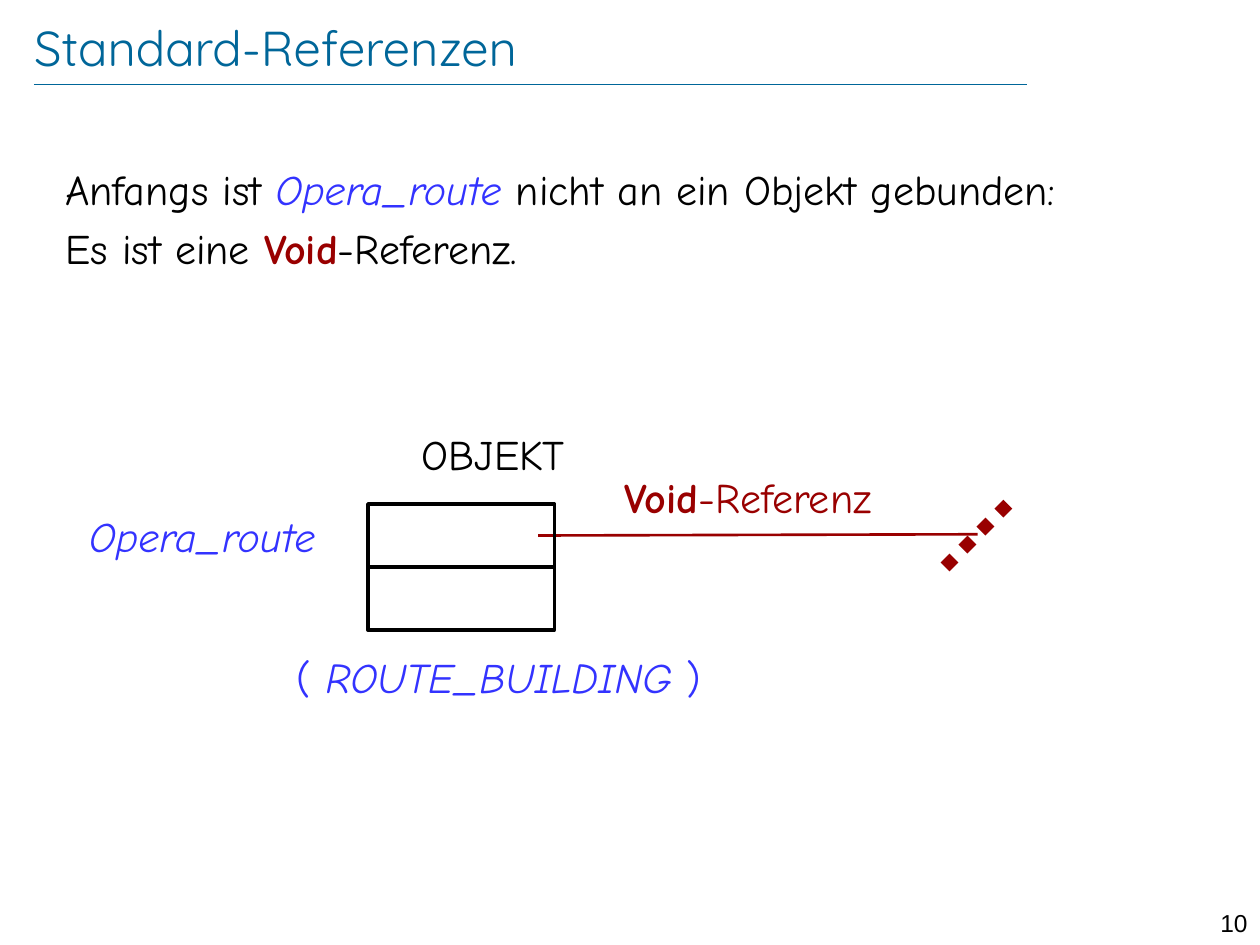
from dataclasses import dataclass

import pptx
import pptx.dml.color
import pptx.enum.dml
import pptx.enum.shapes
import pptx.enum.text
import pptx.oxml.ns
import pptx.util
from lxml import etree

Pt = pptx.util.Pt
RGBColor = pptx.dml.color.RGBColor
ALIGN = pptx.enum.text.PP_ALIGN
ANCHOR = pptx.enum.text.MSO_ANCHOR
DASH = pptx.enum.dml.MSO_LINE

BLACK = RGBColor(0x00, 0x00, 0x00)
TEAL = RGBColor(0x00, 0x66, 0x99)
BLUE = RGBColor(0x33, 0x33, 0xFF)
RED = RGBColor(0x99, 0x00, 0x00)
TEXT_FONT = "Comic Neue"


@dataclass
class Run:
    text: str
    color: RGBColor = BLACK
    bold: bool = False
    italic: bool = False


@dataclass
class Label:
    box: tuple[float, float, float, float]
    paragraphs: list[list[Run]]
    align: ALIGN = ALIGN.LEFT
    font: str = TEXT_FONT
    size: float = 24


@dataclass
class Line:
    start: tuple[float, float]
    end: tuple[float, float]
    color: RGBColor
    width: float
    dash: DASH | None = None


RULE = Line((19.44, 48.24), (586.8, 48.24), TEAL, 0.25)
REFERENCE = Line((307.5, 306), (558.7, 305.3), RED, 1.5)
VOID_MARK = Line((540, 324), (576, 288), RED, 7.25, DASH.ROUND_DOT)

LABELS = [
    Label((680.4, 515.5, 39.6, 17.3), [[Run("10")]], ALIGN.RIGHT, "Arial", 14),
    Label((30.24, 90, 671, 402.5), [
        [Run("Anfangs ist "), Run("Opera_route ", BLUE, italic=True),
         Run("nicht an ein Objekt gebunden:")],
        [Run("Es ist eine "), Run("Void", RED, bold=True), Run("-Referenz.")],
    ]),
    Label((234, 241.2, 383.8, 36), [[Run("OBJEKT")]]),
    Label((43.9, 288, 166.3, 36), [[Run("Opera_route", BLUE, italic=True)]]),
    Label((349.9, 265.7, 188.6, 36),
          [[Run("Void", RED, bold=True), Run("-Referenz", RED)]]),
    Label((108.7, 368.6, 352.8, 36),
          [[Run("( ", BLUE), Run("ROUTE_BUILDING ", BLUE, italic=True),
            Run(")", BLUE)]], ALIGN.CENTER),
]

FIELD_LEFT, FIELD_TOP, FIELD_WIDTH, FIELD_HEIGHT = 210.24, 288, 106.56, 36
FIELD_COUNT = 2


def add_title(slide, text: str) -> None:
    sp = slide.shapes.title
    sp.left, sp.top, sp.width, sp.height = Pt(19.44), Pt(9.4), Pt(625.7), Pt(34.6)
    tf = sp.text_frame
    tf.text = text
    tf.vertical_anchor = ANCHOR.MIDDLE
    tf.margin_left = tf.margin_top = tf.margin_right = tf.margin_bottom = 0
    p = tf.paragraphs[0]
    p.alignment = ALIGN.LEFT
    font = p.runs[0].font
    font.name, font.size, font.color.rgb = "Quicksand", Pt(28), TEAL


def add_label(slide, label: Label) -> None:
    tf = slide.shapes.add_textbox(*map(Pt, label.box)).text_frame
    tf.word_wrap = True
    for i, runs in enumerate(label.paragraphs):
        p = tf.add_paragraph() if i else tf.paragraphs[0]
        p.alignment = label.align
        if i:
            p.space_before = Pt(5)
        for run in runs:
            r = p.add_run()
            r.text = run.text
            r.font.name, r.font.size = label.font, Pt(label.size)
            r.font.bold, r.font.italic = run.bold, run.italic
            r.font.color.rgb = run.color


def add_line(slide, line: Line) -> None:
    cxn = slide.shapes.add_connector(
        pptx.enum.shapes.MSO_CONNECTOR.STRAIGHT,
        *map(Pt, line.start + line.end))
    cxn.line.color.rgb = line.color
    cxn.line.width = Pt(line.width)
    if line.dash is not None:
        cxn.line.dash_style = line.dash
    etree.SubElement(cxn._element.spPr, pptx.oxml.ns.qn("a:effectLst"))


def add_object_field(slide, index: int) -> None:
    sp = slide.shapes.add_shape(
        pptx.enum.shapes.MSO_SHAPE.RECTANGLE, Pt(FIELD_LEFT),
        Pt(FIELD_TOP + index * FIELD_HEIGHT), Pt(FIELD_WIDTH), Pt(FIELD_HEIGHT))
    sp.shadow.inherit = False
    sp.fill.background()
    sp.line.color.rgb = BLACK
    sp.line.width = Pt(2)


def main() -> None:
    prs = pptx.Presentation()
    prs.slide_width, prs.slide_height = Pt(720), Pt(540)
    slide = prs.slides.add_slide(prs.slide_layouts.get_by_name("Title Only"))
    add_title(slide, "Standard-Referenzen")
    for line in (RULE, REFERENCE):
        add_line(slide, line)
    for label in LABELS:
        add_label(slide, label)
    add_line(slide, VOID_MARK)
    for index in range(FIELD_COUNT):
        add_object_field(slide, index)
    prs.save("out.pptx")


if __name__ == "__main__":
    main()
